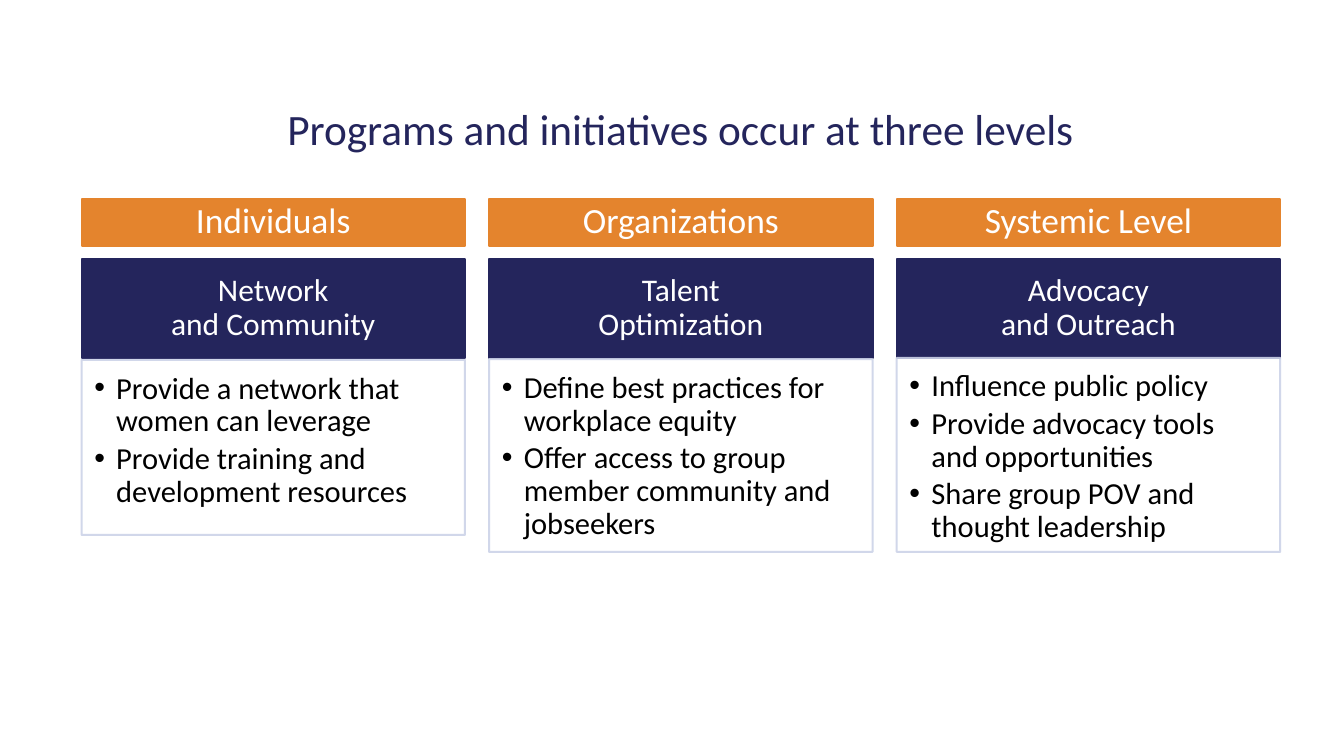
from dataclasses import dataclass

from lxml.etree import SubElement
from pptx import Presentation
from pptx.dml.color import RGBColor
from pptx.enum.shapes import MSO_SHAPE
from pptx.enum.text import MSO_ANCHOR, PP_ALIGN
from pptx.oxml.ns import qn
from pptx.util import Inches, Pt


@dataclass(frozen=True)
class Theme:
    font: str = "Calibri"
    navy: str = "24255C"
    orange: str = "E4842D"
    outline: str = "CCD3E8"
    white: str = "FFFFFF"
    black: str = "000000"
    title_size: int = 44
    level_size: int = 36
    program_size: int = 32
    bullet_size: int = 31
    line_width: int = 2


THEME = Theme()
BAND_INSETS = (0.24, 0.14, 0.24, 0.14)
BULLET_INSETS = (0.18, 0.18, 0.24, 0.27)
BULLET_INDENT = Inches(0.31)

COLUMN_LEFT, COLUMN_WIDTH, COLUMN_STEP = 1.15, 5.41, 5.75
LEVEL_TOP, LEVEL_HEIGHT = 2.81, 0.66
PROGRAM_TOP, PROGRAM_HEIGHT = 3.65, 1.41

# Level, program, bullets, top and height of the bullet panel
LEVELS = [
    ("Individuals", "Network\vand Community",
     ["Provide a network that women can leverage",
      "Provide training and development resources"], 5.08, 2.47),
    ("Organizations", "Talent\vOptimization",
     ["Define best practices for workplace equity",
      "Offer access to group member community and jobseekers"], 5.07, 2.72),
    ("Systemic Level", "Advocacy\vand Outreach",
     ["Influence public policy",
      "Provide advocacy tools and opportunities",
      "Share group POV and thought leadership"], 5.05, 2.74),
]


def write_text(holder, lines, *, size, color, align=PP_ALIGN.CENTER,
               anchor=MSO_ANCHOR.MIDDLE, insets=BAND_INSETS,
               line_spacing=0.9, space_after=0, bullets=False):
    frame = holder.text_frame
    frame.word_wrap = True
    frame.vertical_anchor = anchor
    (frame.margin_left, frame.margin_top,
     frame.margin_right, frame.margin_bottom) = map(Inches, insets)
    for index, line in enumerate(lines):
        paragraph = frame.paragraphs[0] if index == 0 else frame.add_paragraph()
        paragraph.text = line
        paragraph.alignment = align
        paragraph.line_spacing = line_spacing
        paragraph.space_after = Pt(space_after)
        if bullets:
            properties = paragraph._p.get_or_add_pPr()
            properties.set("marL", str(BULLET_INDENT))
            properties.set("indent", str(-BULLET_INDENT))
            SubElement(properties, qn("a:buFont"), typeface="Arial")
            SubElement(properties, qn("a:buChar"), char="•")
        paragraph.font.name = THEME.font
        paragraph.font.size = Pt(size)
        paragraph.font.color.rgb = RGBColor.from_string(color)


def add_panel(slide, box, line_color, fill_color=None):
    panel = slide.shapes.add_shape(MSO_SHAPE.RECTANGLE, *map(Inches, box))
    panel.shadow.inherit = False
    if fill_color:
        panel.fill.solid()
        panel.fill.fore_color.rgb = RGBColor.from_string(fill_color)
    else:
        panel.fill.background()
    panel.line.color.rgb = RGBColor.from_string(line_color)
    panel.line.width = Pt(THEME.line_width)
    return panel


def add_band(slide, box, label, color, size):
    band = add_panel(slide, box, color, color)
    write_text(band, [label], size=size, color=THEME.white)


def add_bullet_panel(slide, box, bullets):
    panel = add_panel(slide, box, THEME.outline)
    line_color = panel.line.fill._xPr.find(qn("a:solidFill"))[0]
    SubElement(line_color, qn("a:alpha"), val="90000")
    write_text(panel, bullets, size=THEME.bullet_size, color=THEME.black,
               align=PP_ALIGN.LEFT, anchor=MSO_ANCHOR.TOP,
               insets=BULLET_INSETS, space_after=4.65, bullets=True)


def add_title(slide, box, title):
    heading = slide.shapes.add_textbox(*map(Inches, box))
    write_text(heading, [title], size=THEME.title_size, color=THEME.navy,
               insets=(0, 0, 0, 0), line_spacing=1.0)


def add_level_column(slide, left, width, level, program, bullets,
                     bullets_top, bullets_height):
    add_band(slide, (left, PROGRAM_TOP, width, PROGRAM_HEIGHT),
             program, THEME.navy, THEME.program_size)
    add_bullet_panel(slide, (left, bullets_top, width, bullets_height), bullets)
    add_band(slide, (left, LEVEL_TOP, width, LEVEL_HEIGHT),
             level, THEME.orange, THEME.level_size)


def main():
    deck = Presentation()
    deck.slide_width, deck.slide_height = Inches(18.96), Inches(10.67)
    slide = deck.slides.add_slide(deck.slide_layouts[6])
    add_title(slide, (1.51, 1, 16.19, 1.63),
              "Programs and initiatives occur at three levels")
    for index, level in enumerate(LEVELS):
        add_level_column(slide, COLUMN_LEFT + index * COLUMN_STEP,
                         COLUMN_WIDTH, *level)
    deck.save("out.pptx")


if __name__ == "__main__":
    main()
